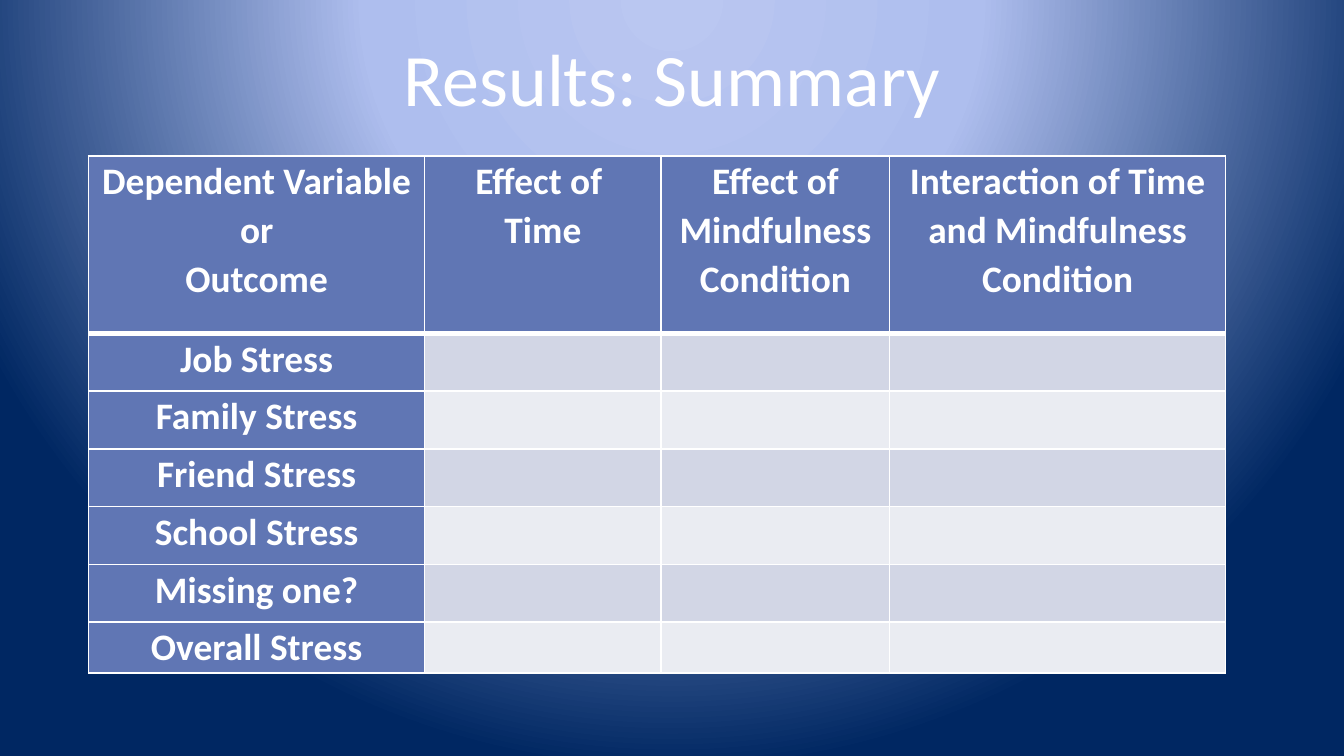
from pptx import Presentation
from pptx.dml.color import RGBColor
from pptx.enum.text import MSO_ANCHOR, PP_ALIGN
from pptx.oxml import parse_xml
from pptx.oxml.ns import nsdecls, qn
from pptx.util import Inches, Pt

CENTER = PP_ALIGN.CENTER
MIDDLE = MSO_ANCHOR.MIDDLE
TITLE_ONLY = 5
FONT = "Calibri"

SLIDE_WIDTH = Inches(10)
SLIDE_HEIGHT = SLIDE_WIDTH * 9 // 16

WHITE = RGBColor(0xFF, 0xFF, 0xFF)
HEADING_BLUE = RGBColor(0x60, 0x76, 0xB4)
BANDS = (RGBColor(0xEA, 0xEC, 0xF2), RGBColor(0xD2, 0xD6, 0xE5))
GLOW_STOPS = (
    (0, RGBColor(0xBA, 0xC7, 0xF1)),
    (40, RGBColor(0xAE, 0xBE, 0xEE)),
    (100, RGBColor(0x00, 0x27, 0x62)),
)

COLUMN_WIDTHS = (2.5, 1.76, 1.7, 2.5)
ROW_HEIGHTS = (1.32,) + (0.43,) * 5 + (0.38,)
HEADINGS = (
    "Dependent Variable or\nOutcome",
    "Effect of \nTime",
    "Effect of Mindfulness Condition",
    "Interaction of Time and Mindfulness Condition",
)
OUTCOMES = (
    "Job Stress",
    "Family Stress",
    "Friend Stress",
    "School Stress",
    "Missing one?",
    "Overall Stress",
)


def paint_background(slide):
    slide.background.fill.gradient()
    gradient = next(slide.element.iter(qn("a:gradFill")))
    stops = "".join(
        f'<a:gs pos="{share * 1000}"><a:srgbClr val="{color}"/></a:gs>'
        for share, color in GLOW_STOPS
    )
    glow = parse_xml(
        f'<a:gradFill {nsdecls("a")} rotWithShape="1"><a:gsLst>{stops}</a:gsLst>'
        '<a:path path="circle">'
        '<a:fillToRect l="50000" t="-80000" r="50000" b="180000"/>'
        "</a:path></a:gradFill>"
    )
    gradient.getparent().replace(gradient, glow)


def format_text(text_frame, size, bold, line_spacing):
    for paragraph in text_frame.paragraphs:
        paragraph.alignment = CENTER
        paragraph.line_spacing = line_spacing
        for run in paragraph.runs:
            run.font.name = FONT
            run.font.size = Pt(size)
            run.font.bold = bold
            run.font.color.rgb = WHITE


def add_title(slide, text):
    title = slide.shapes.title
    title.left, title.top = Inches(0.5), Inches(0.23)
    title.width, title.height = Inches(9), Inches(0.69)
    title.text_frame.text = text
    title.text_frame.vertical_anchor = MIDDLE
    format_text(title.text_frame, 39.6, False, 1)


def set_borders(cell, top, bottom):
    properties = cell._tc.get_or_add_tcPr()
    for side, width in (("L", 1), ("R", 1), ("T", top), ("B", bottom)):
        properties.append(parse_xml(
            f'<a:ln{side} {nsdecls("a")} w="{Pt(width)}"><a:solidFill>'
            f'<a:srgbClr val="{WHITE}"/></a:solidFill></a:ln{side}>'
        ))


def format_cell(cell, text, color, top, bottom):
    cell.margin_left = cell.margin_right = Inches(0.07)
    cell.margin_top = cell.margin_bottom = 0
    set_borders(cell, top, bottom)
    cell.fill.solid()
    cell.fill.fore_color.rgb = color
    if text:
        cell.text_frame.text = text
        format_text(cell.text_frame, 20, True, 1.07)


def add_summary_table(slide):
    frame = slide.shapes.add_table(
        len(ROW_HEIGHTS), len(COLUMN_WIDTHS), Inches(0.66), Inches(1.16),
        Inches(sum(COLUMN_WIDTHS)), Inches(sum(ROW_HEIGHTS)),
    )
    table = frame.table
    for column, width in zip(table.columns, COLUMN_WIDTHS):
        column.width = Inches(width)
    for row, height in zip(table.rows, ROW_HEIGHTS):
        row.height = Inches(height)
    blanks = ("",) * (len(HEADINGS) - 1)
    contents = [HEADINGS] + [(outcome,) + blanks for outcome in OUTCOMES]
    for row_index, texts in enumerate(contents):
        top = 3 if row_index == 1 else 1
        bottom = 3 if row_index == 0 else 1
        for column_index, text in enumerate(texts):
            color = HEADING_BLUE if text else BANDS[row_index % 2]
            format_cell(table.cell(row_index, column_index), text, color, top, bottom)


def main():
    presentation = Presentation()
    presentation.slide_width = SLIDE_WIDTH
    presentation.slide_height = SLIDE_HEIGHT
    slide = presentation.slides.add_slide(presentation.slide_layouts[TITLE_ONLY])
    paint_background(slide)
    add_title(slide, "Results: Summary")
    add_summary_table(slide)
    presentation.save("out.pptx")


if __name__ == "__main__":
    main()
